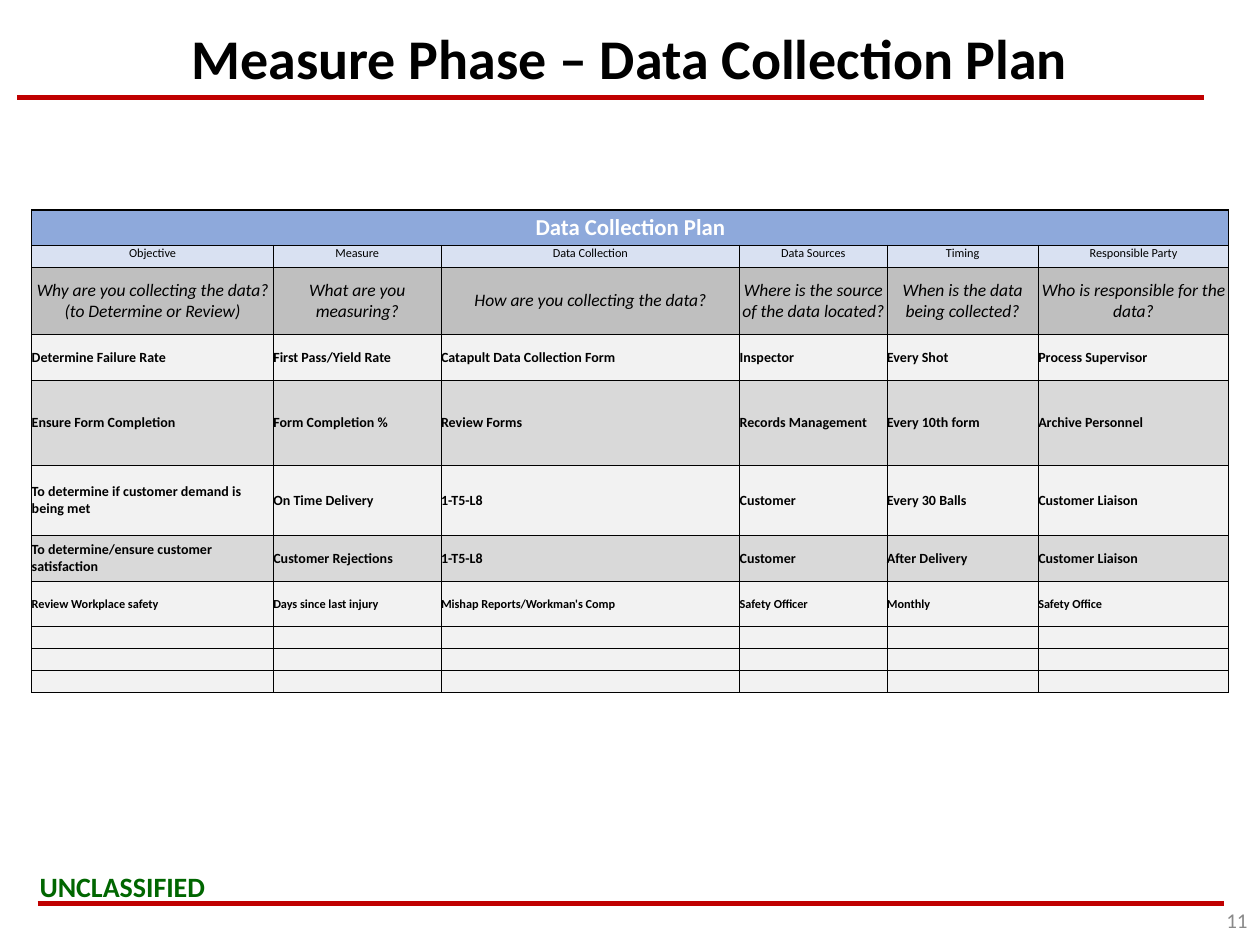
from lxml.etree import SubElement
from pptx import Presentation
from pptx.dml.color import RGBColor
from pptx.enum.shapes import MSO_CONNECTOR as Link
from pptx.enum.text import MSO_ANCHOR as Anchor, PP_ALIGN as Align
from pptx.oxml.ns import qn
from pptx.util import Cm, Pt

# Content
TITLE = "Measure Phase – Data Collection Plan"
MARK = "UNCLASSIFIED"
PAGE = "11"
HEAD = "Data Collection Plan"
ROWS = [
    (HEAD, "", "", "", "", ""),
    ("Objective", "Measure", "Data Collection", "Data Sources", "Timing",
     "Responsible Party"),
    ("Why are you collecting the data? (to Determine or Review)",
     "What are you measuring?", "How are you collecting the data?",
     "Where is the source of the data located?",
     "When is the data being collected?",
     "Who is responsible for the data?"),
    ("Determine Failure Rate", "First Pass/Yield Rate",
     "Catapult Data Collection Form", "Inspector", "Every Shot",
     "Process Supervisor"),
    ("Ensure Form Completion", "Form Completion %", "Review Forms",
     "Records Management", "Every 10th form", "Archive Personnel"),
    ("To determine if customer demand is being met", "On Time Delivery",
     "1-T5-L8", "Customer", "Every 30 Balls", "Customer Liaison"),
    ("To determine/ensure customer satisfaction", "Customer Rejections",
     "1-T5-L8", "Customer", "After Delivery", "Customer Liaison"),
    ("Review Workplace safety", "Days since last injury",
     "Mishap Reports/Workman's Comp", "Safety Officer", "Monthly",
     "Safety Office"),
] + [("",) * 6] * 3

# Look
FONT = "Calibri"
HEX = {
    "black": "000000", "white": "FFFFFF", "red": "C00000", "green": "006600",
    "page": "898989", "blue": "8EA9DB", "pale": "D9E1F2", "mid": "BFBFBF",
    "light": "F2F2F2", "gray": "D9D9D9",
}
WIDTHS = [4.87, 3.38, 6.02, 2.97, 3.05, 3.84]
# Row style: size, bold, italic, ink, align, anchor
STYLES = {
    "head": (13, True, False, "white", Align.CENTER, Anchor.MIDDLE),
    "name": (7, False, False, "black", Align.CENTER, Anchor.TOP),
    "ask": (10, False, True, "black", Align.CENTER, Anchor.MIDDLE),
    "data": (8, True, False, "black", Align.LEFT, Anchor.MIDDLE),
    "small": (7, True, False, "black", Align.LEFT, Anchor.MIDDLE),
}
# Row plan: height, fill, style
PLAN = [
    (0.72, "blue", "head"), (0.44, "pale", "name"), (1.35, "mid", "ask"),
    (0.93, "light", "data"), (1.71, "gray", "data"), (1.41, "light", "data"),
    (0.93, "gray", "data"), (0.91, "light", "small"),
] + [(0.44, "light", "small")] * 3


def color(name):
    return RGBColor.from_string(HEX[name])


def style(para, size, ink, bold=False, slant=False, align=Align.LEFT):
    para.alignment = align
    font = para.font
    font.name, font.size, font.bold, font.italic = FONT, Pt(size), bold, slant
    font.color.rgb = color(ink)


def rule(slide, left, top, width):
    line = slide.shapes.add_connector(
        Link.STRAIGHT, Cm(left), Cm(top), Cm(left + width), Cm(top))
    line.line.color.rgb = color("red")
    line.line.width = Pt(3)
    SubElement(line._element.spPr, qn("a:effectLst"))


def label(slide, text, box, size, ink, wrap=True, **look):
    shape = slide.shapes.add_textbox(*map(Cm, box))
    frame = shape.text_frame
    frame.word_wrap = wrap
    frame.vertical_anchor = Anchor.MIDDLE
    frame.text = text
    style(frame.paragraphs[0], size, ink, **look)


def border(cell, **sides):
    props = cell._tc.get_or_add_tcPr()
    for side in "LRTB":
        line = SubElement(props, qn(f"a:ln{side}"), w=str(Pt(sides[side])))
        fill = SubElement(line, qn("a:solidFill"))
        SubElement(fill, qn("a:srgbClr"), val=HEX["black"])


def fill_table(table):
    last = len(WIDTHS) - 1
    for col, width in zip(table.columns, WIDTHS):
        col.width = Cm(width)
    for r, (high, tint, kind) in enumerate(PLAN):
        size, bold, slant, ink, align, anchor = STYLES[kind]
        table.rows[r].height = Cm(high)
        for c, text in enumerate(ROWS[r]):
            cell = table.cell(r, c)
            cell.text = text
            cell.vertical_anchor = anchor
            cell.margin_left = cell.margin_right = 0
            cell.margin_top = cell.margin_bottom = 0
            style(cell.text_frame.paragraphs[0], size, ink, bold, slant, align)
            # Heavier lines round the heading and down the outer sides
            border(cell, L=1 if c == 0 else 0.5, R=1 if c == last else 0.5,
                   T=1 if r < 2 else 0.5, B=1 if r == 0 else 0.5)
            cell.fill.solid()
            cell.fill.fore_color.rgb = color(tint)
    table.cell(0, 0).merge(table.cell(0, last))


def main():
    deck = Presentation()
    deck.slide_width, deck.slide_height = Cm(25.4), Cm(19.05)
    slide = deck.slides.add_slide(deck.slide_layouts[5])

    # Rules and marking
    rule(slide, 0.35, 1.96, 23.92)
    label(slide, MARK, (0.55, 17.4, 3.89, 0.94), 16, "green",
          wrap=False, bold=True)
    rule(slide, 0.76, 18.21, 23.92)

    # Title
    title = slide.shapes.title
    title.left, title.top = Cm(2.44), Cm(-0.43)
    title.width, title.height = Cm(20.52), Cm(3.18)
    title.text_frame.text = TITLE
    title.text_frame.vertical_anchor = Anchor.MIDDLE
    style(title.text_frame.paragraphs[0], 32, "black", bold=True,
          align=Align.CENTER)

    # Page number
    label(slide, PAGE, (19.48, 18.03, 5.92, 1.02), 12, "page",
          align=Align.RIGHT)

    # Plan table
    high = sum(row[0] for row in PLAN)
    frame = slide.shapes.add_table(
        len(ROWS), len(WIDTHS), Cm(0.64), Cm(4.23), Cm(sum(WIDTHS)), Cm(high))
    table = frame.table
    table.first_row = table.horz_banding = False
    fill_table(table)

    deck.save("out.pptx")


if __name__ == "__main__":
    main()
